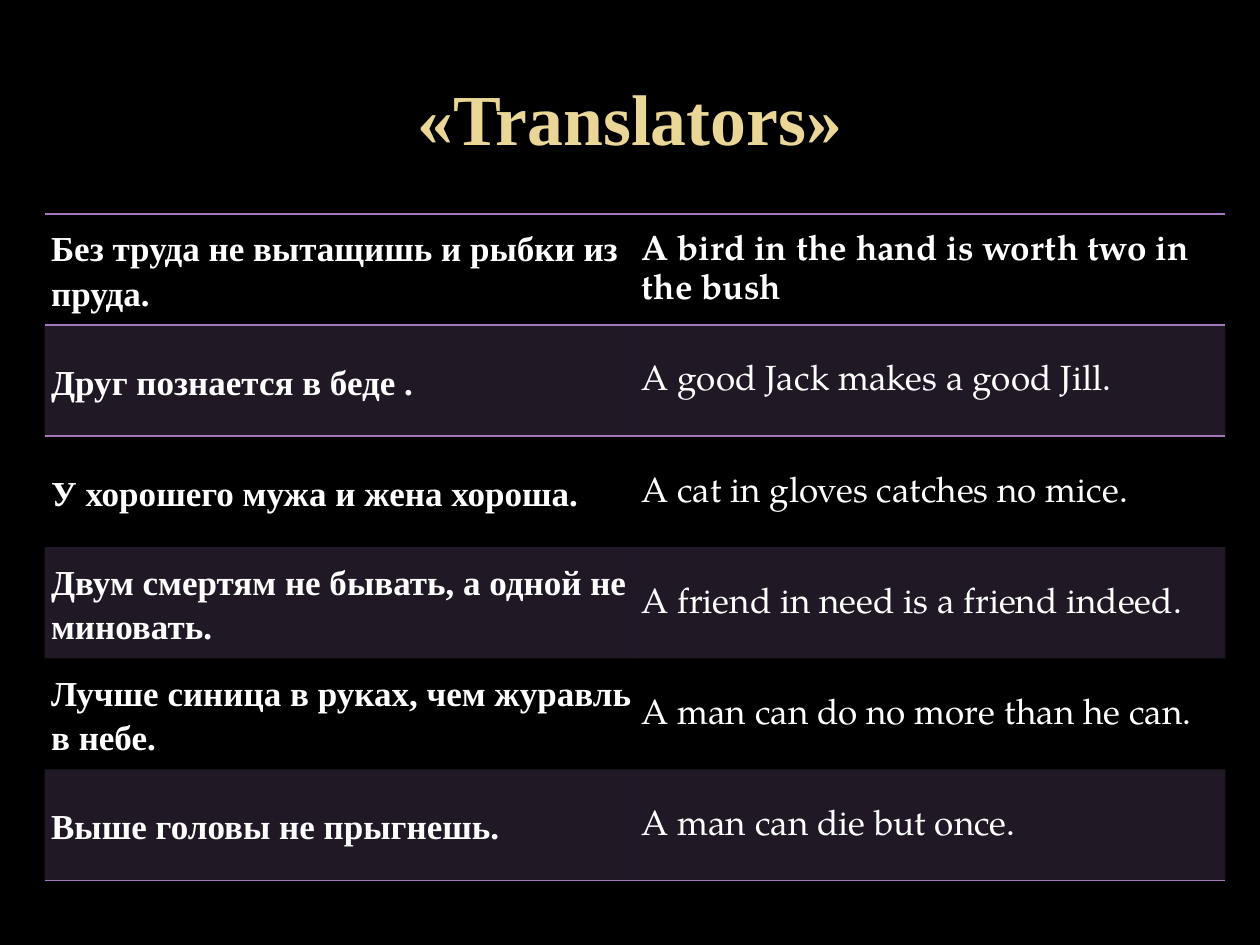
import pptx
import pptx.util
import pptx.dml.color
import pptx.enum.text
import pptx.oxml
import pptx.oxml.ns
from pptx.util import Cm

COLOURS = {
    "background": "000000",
    "gold": "EAD696",
    "dark gold": "E7D081",
    "text": "FFFFFF",
    "violet": "A379BB",
}
SERIF = "Times New Roman"
BOOK = "TeX Gyre Pagella"
PLAIN_TABLE_STYLE = "{2D5ABB26-0587-4C30-8999-92F81FD0307C}"
COLUMN_WIDTH = Cm(11.9)
ROW_HEIGHT = Cm(2.24)

PROVERBS = [
    ("Без труда не вытащишь и рыбки из пруда.", "A bird in the hand is worth two in the bush"),
    ("Друг познается в беде .", "A good Jack makes a good Jill."),
    ("У хорошего мужа и жена хороша.", "A cat in gloves catches no mice."),
    ("Двум смертям не бывать, а одной не миновать.", "A friend in need is a friend indeed."),
    ("Лучше синица в руках, чем журавль в небе.", "A man can do no more than he can."),
    ("Выше головы не прыгнешь.", "A man can die but once."),
]


def colour(name):
    return pptx.dml.color.RGBColor.from_string(COLOURS[name])


def write(frame, text, font, size, bold=True, ink="text", align=None, spacing=None):
    para = frame.paragraphs[0]
    para.alignment = align
    para.line_spacing = spacing
    span = para.add_run()
    span.text = text
    span.font.name = font
    span.font.size = pptx.util.Pt(size)
    span.font.bold = bold
    span.font.color.rgb = colour(ink)
    return para


def add_title(page, text):
    box = page.shapes.title
    box.left, box.top, box.width, box.height = Cm(1.27), Cm(0.76), Cm(22.86), Cm(3.18)
    frame = box.text_frame
    frame.auto_size = pptx.enum.text.MSO_AUTO_SIZE.NONE
    frame.vertical_anchor = pptx.enum.text.MSO_ANCHOR.MIDDLE
    para = write(frame, text, SERIF, 41, ink="gold", align=pptx.enum.text.PP_ALIGN.CENTER)
    fill = para.runs[0].font.fill
    fill.gradient()
    fill.gradient_angle = 280
    for stop, (position, name) in zip(fill.gradient_stops, [(0.73, "gold"), (1, "dark gold")]):
        stop.position = position
        stop.color.rgb = colour(name)


def shade(cell, name, opacity):
    cell.fill.solid()
    cell.fill.fore_color.rgb = colour(name)
    tint = cell.fill._xPr.find(".//" + pptx.oxml.ns.qn("a:srgbClr"))
    pptx.oxml.ns.qn("a:alpha")
    alpha = tint.makeelement(pptx.oxml.ns.qn("a:alpha"), {"val": str(opacity * 1000)})
    tint.append(alpha)


def add_borders(cell, sides):
    properties = cell._tc.get_or_add_tcPr()
    for index, side in enumerate(sides):
        line = pptx.oxml.parse_xml(
            f'<a:ln{side} {pptx.oxml.ns.nsdecls("a")} w="12700"><a:solidFill>'
            f'<a:srgbClr val="{COLOURS["violet"]}"/></a:solidFill></a:ln{side}>'
        )
        properties.insert(index, line)


def fill_cell(cell, text, row, column):
    cell.margin_left = cell.margin_right = cell.margin_top = cell.margin_bottom = 0
    cell.vertical_anchor = pptx.enum.text.MSO_ANCHOR.MIDDLE
    russian = column == 0
    para = write(cell.text_frame, text, SERIF if russian else BOOK, 20,
                 bold=russian or row == 0, spacing=1.15)
    para._p.get_or_add_pPr().set("marL", str(Cm(0.13)))
    if row % 2:
        shade(cell, "violet", 20)
    else:
        cell.fill.background()
    borders = {0: "TB", 1: "T", len(PROVERBS) - 1: "B"}
    add_borders(cell, borders.get(row, ""))


def add_proverbs(page):
    rows, columns = len(PROVERBS), len(PROVERBS[0])
    frame = page.shapes.add_table(rows, columns, Cm(0.9), Cm(4.31),
                                  COLUMN_WIDTH * columns, ROW_HEIGHT * rows)
    table = frame.table
    table.first_row = table.horz_banding = False
    table._tbl.tblPr.find(pptx.oxml.ns.qn("a:tableStyleId")).text = PLAIN_TABLE_STYLE
    for row, pair in enumerate(PROVERBS):
        for column, text in enumerate(pair):
            fill_cell(table.cell(row, column), text, row, column)


def main():
    deck = pptx.Presentation()
    deck.slide_width, deck.slide_height = Cm(25.4), Cm(19.05)
    page = deck.slides.add_slide(deck.slide_layouts[5])
    page.background.fill.solid()
    page.background.fill.fore_color.rgb = colour("background")
    add_title(page, "«Translators»")
    add_proverbs(page)
    deck.save("out.pptx")


if __name__ == "__main__":
    main()
